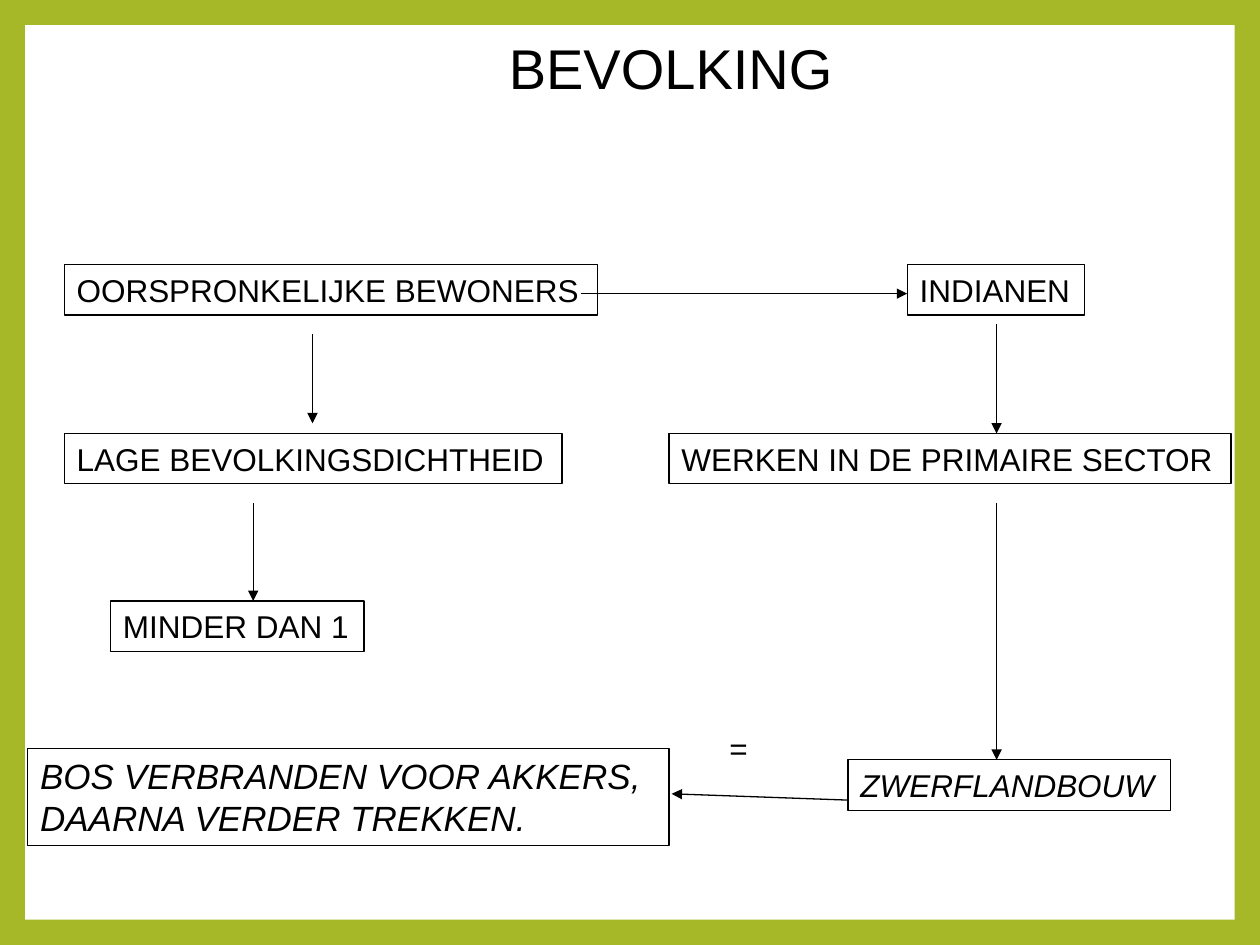
from lxml import etree
from pptx import Presentation
from pptx.dml.color import RGBColor
from pptx.enum.shapes import MSO_CONNECTOR, MSO_SHAPE
from pptx.enum.text import MSO_AUTO_SIZE
from pptx.oxml.ns import qn
from pptx.util import Pt

RECT = MSO_SHAPE.RECTANGLE
STRAIGHT = MSO_CONNECTOR.STRAIGHT
FIT_SHAPE = MSO_AUTO_SIZE.SHAPE_TO_FIT_TEXT

GREEN, WHITE, BLACK = "A6B727", "FFFFFF", "000000"
FONT = "Arial"
LINE_WIDTH = 0.75
BOX_HEIGHT = 28.8
LEFT_X, RIGHT_X = 36.7, 569.5
ROW_1, ROW_2, ROW_3, ROW_4 = 151.2, 247.7, 343.5, 434.2
ROW_2_EXIT = 287.3


def paint(fill, color):
    fill.solid()
    fill.fore_color.rgb = RGBColor.from_string(color)


def add_panel(s, x, y, w, h):
    sp = s.shapes.add_shape(RECT, Pt(x), Pt(y), Pt(w), Pt(h))
    sp.shadow.inherit = False
    paint(sp.fill, WHITE)
    sp.line.fill.background()


def add_text(s, lines, x, y, w, h=BOX_HEIGHT, size=18, italic=None):
    sp = s.shapes.add_textbox(Pt(x), Pt(y), Pt(w), Pt(h))
    tf = sp.text_frame
    tf.word_wrap = False
    tf.auto_size = FIT_SHAPE
    for i, line in enumerate(lines):
        p = tf.add_paragraph() if i else tf.paragraphs[0]
        r = p.add_run()
        r.text = line
        r.font.name = FONT
        r.font.size = Pt(size)
        r.font.italic = italic
        paint(r.font.fill, BLACK)
    return sp


def draw_line(line):
    paint(line.fill, BLACK)
    line.width = Pt(LINE_WIDTH)


def add_box(s, lines, x, y, w, **style):
    draw_line(add_text(s, lines, x, y, w, **style).line)


def add_arrow(s, x1, y1, x2, y2):
    sp = s.shapes.add_connector(STRAIGHT, Pt(x1), Pt(y1), Pt(x2), Pt(y2))
    draw_line(sp.line)
    sp_pr = sp._element.spPr
    etree.SubElement(sp_pr.find(qn("a:ln")), qn("a:tailEnd"), type="triangle")
    etree.SubElement(sp_pr, qn("a:effectLst"))


def main():
    prs = Presentation()
    prs.slide_width, prs.slide_height = Pt(720), Pt(540)
    s = prs.slides.add_slide(prs.slide_layouts[6])
    paint(s.background.fill, GREEN)
    add_panel(s, 14.4, 14.4, 691.2, 511.2)

    add_text(s, ["BEVOLKING"], 283.7, 15.8, 201.6, h=46, size=32)

    add_box(s, ["OORSPRONKELIJKE BEWONERS"], LEFT_X, ROW_1, 304.6)
    add_box(s, ["LAGE BEVOLKINGSDICHTHEID"], LEFT_X, ROW_2, 284.4)
    add_box(s, ["MINDER DAN 1"], 63.2, ROW_3, 144.8)
    add_box(s, ["INDIANEN"], 518.4, ROW_1, 101.5)
    add_box(s, ["WERKEN IN DE PRIMAIRE SECTOR"], 382.3, ROW_2, 321.1)
    add_box(s, ["ZWERFLANDBOUW"], 484.6, ROW_4, 184.3, italic=True)
    add_box(s, ["BOS VERBRANDEN VOOR AKKERS,", "DAARNA VERDER TREKKEN."],
            15.8, 427.7, 366.5, h=55.4, size=20, italic=True)
    add_text(s, ["="], 409.7, 413.3, 25.2)

    add_arrow(s, 331.9, 167.8, 518.4, 167.8)
    add_arrow(s, 178.6, 190.8, 178.6, 241.9)
    add_arrow(s, 144.7, ROW_2_EXIT, 144.7, ROW_3)
    add_arrow(s, RIGHT_X, 185, RIGHT_X, ROW_2)
    add_arrow(s, RIGHT_X, ROW_2_EXIT, RIGHT_X, ROW_4)
    add_arrow(s, 484.6, 457.2, 383.8, 453.6)

    prs.save("out.pptx")


if __name__ == "__main__":
    main()
